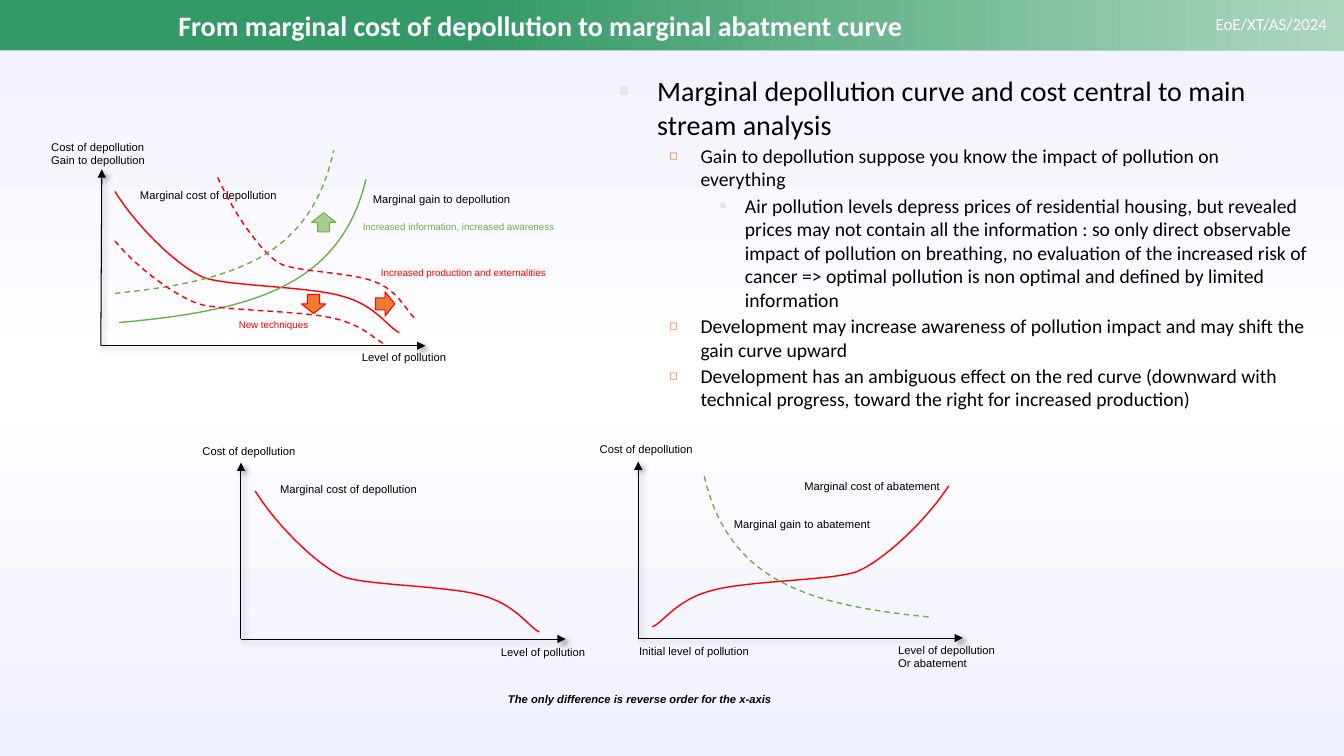
from copy import deepcopy

from lxml import etree
from pptx import Presentation, util as u
from pptx.dml.color import RGBColor
from pptx.enum import dml, shapes, text
from pptx.oxml import parse_xml
from pptx.oxml.ns import nsdecls, qn

COLORS = {
    "black": "000000", "white": "FFFFFF", "lavender": "F0F1FE",
    "band": "339966", "band_end": "ADD6C1", "red": "FF0000",
    "green": "70AD47", "pale_green": "A8D08C", "orange": "ED7D31", "gray": "E7E6E6",
}
COST = [(0, 0), (8.5, 27.1), (22.7, 53.6), (30.9, 60.7), (38.7, 67.1),
        (68.4, 67.1), (80.1, 74.3), (91.8, 80.7), (96.1, 96.4), (100, 100)]
GAIN = [(0, 100), (55, 91.5), (89.5, 74), (100, 0)]
BULLETS = [
    ("■", "gray", 60, 0.38, -0.38, 20),
    ("◻", "orange", 70, 0.81, -0.31, 14),
    ("■", "gray", 60, 1.25, -0.25, 14),
]


def rgb(name):
    return RGBColor.from_string(COLORS[name])


class Lecture:
    def __init__(self, slide):
        self.slide = slide
        self.canvas = slide.shapes

    def start_graph(self):
        self.canvas = self.slide.shapes.add_group_shape().shapes

    def end_graph(self):
        self.canvas = self.slide.shapes

    def gradient(self, fill, owner, names, angle):
        fill.gradient()
        fill.gradient_angle = angle
        stop_list = owner.xpath(".//a:gsLst")[0]
        while len(stop_list) < len(names):
            stop_list.append(deepcopy(stop_list[0]))
        for i, (stop, name) in enumerate(zip(fill.gradient_stops, names)):
            stop.position = i / (len(names) - 1)
            stop.color.rgb = rgb(name)

    def shape(self, kind, box, fill=None, line=None, rotation=0):
        part = self.canvas.add_shape(kind, *map(u.Inches, box))
        part.shadow.inherit = False
        part.rotation = rotation
        if fill:
            part.fill.solid()
            part.fill.fore_color.rgb = rgb(fill)
        if line:
            part.line.color.rgb = rgb(line)
            part.line.width = u.Pt(0.75)
        else:
            part.line.fill.background()
        return part

    def style(self, paragraph, size, color, font, bold=False, italic=False):
        for run in paragraph.runs:
            run.font.size = u.Pt(size)
            run.font.name = font
            run.font.color.rgb = rgb(color)
            run.font.bold = bold
            run.font.italic = italic

    def label(self, wording, box, size=8, color="black", font="Arial", indent=0.0,
              align=text.PP_ALIGN.LEFT, anchor=text.MSO_ANCHOR.TOP, bold=False, italic=False):
        frame = self.canvas.add_textbox(*map(u.Inches, box)).text_frame
        frame.word_wrap = True
        frame.vertical_anchor = anchor
        frame.text = wording
        for paragraph in frame.paragraphs:
            paragraph.alignment = align
            if indent:
                paragraph.level = 1
                paragraph._p.get_or_add_pPr().set("marL", str(u.Inches(indent)))
            self.style(paragraph, size, color, font, bold, italic)

    def graph_label(self, wording, left, top, **options):
        height = 0.24 + 0.13 * wording.count("\n")
        self.label(wording, (left, top, 5, height), indent=0.5, **options)

    def outline(self, items, box):
        frame = self.canvas.add_textbox(*map(u.Inches, box)).text_frame
        frame.word_wrap = True
        frame.text = "\n".join(wording for _, wording in items)
        for i, (paragraph, (level, _)) in enumerate(zip(frame.paragraphs, items)):
            mark, color, percent, margin, indent, size = BULLETS[level]
            paragraph.level = level
            properties = paragraph._p.get_or_add_pPr()
            properties.set("marL", str(u.Inches(margin)))
            properties.set("indent", str(u.Inches(indent)))
            tint = etree.SubElement(properties, qn("a:buClr"))
            etree.SubElement(tint, qn("a:srgbClr"), val=COLORS[color])
            etree.SubElement(properties, qn("a:buSzPct"), val=str(percent * 1000))
            etree.SubElement(properties, qn("a:buFont"), typeface="Arial")
            etree.SubElement(properties, qn("a:buChar"), char=mark)
            if i:
                paragraph.space_before = u.Pt(2)
            self.style(paragraph, size, "black", "Calibri")

    def axes(self, left, bottom, tip=0.0):
        for end in ((left + 3.22, bottom), (left + tip, bottom - 1.75)):
            axis = self.canvas.add_connector(
                shapes.MSO_CONNECTOR.STRAIGHT, *map(u.Inches, (left, bottom, *end)))
            axis.line.color.rgb = rgb("black")
            axis.line.width = u.Pt(0.75)
            etree.SubElement(axis.line._get_or_add_ln(), qn("a:tailEnd"), type="triangle")
            axis._element.spPr.append(parse_xml(
                f'<a:effectLst {nsdecls("a")}><a:outerShdw blurRad="{u.Pt(4)}" '
                f'dist="{u.Pt(3)}" dir="2700000" rotWithShape="0">'
                f'<a:srgbClr val="{COLORS["black"]}"><a:alpha val="40000"/></a:srgbClr>'
                '</a:outerShdw></a:effectLst>'))

    def curve(self, profile, box, color, dashed=False, mirrored=False):
        left, top, width, height = box
        points = [(u.Inches(left + width * (100 - x if mirrored else x) / 100),
                   u.Inches(top + height * y / 100)) for x, y in profile]
        builder = self.canvas.build_freeform(*points[0])
        builder.add_line_segments(points[1:], close=False)
        part = builder.convert_to_shape()
        segments = part._element.xpath(".//a:lnTo")
        for i in range(0, len(segments), 3):
            bezier = etree.Element(qn("a:cubicBezTo"))
            segments[i].addprevious(bezier)
            for segment in segments[i:i + 3]:
                bezier.append(segment[0])
                segment.getparent().remove(segment)
        part.shadow.inherit = False
        part.fill.background()
        part.line.color.rgb = rgb(color)
        part.line.width = u.Pt(1)
        if dashed:
            part.line.dash_style = dml.MSO_LINE.DASH


def main():
    deck = Presentation()
    deck.slide_width, deck.slide_height = u.Inches(13.33), u.Inches(7.5)
    slide = deck.slides.add_slide(deck.slide_layouts[6])
    page = Lecture(slide)
    page.gradient(slide.background.fill, slide.element, ("lavender", "white", "lavender"), 90)

    rectangle = shapes.MSO_SHAPE.RECTANGLE
    page.shape(rectangle, (0, 0, 13.33, 0.5), "band")
    fade = page.shape(rectangle, (4.67, 0, 8.66, 0.5))
    page.gradient(fade.fill, fade._element, ("band", "band_end"), 0)
    page.label("EoE/XT/AS/2024", (11.32, 0.09, 1.94, 0.3), 12, "white", "Calibri",
               align=text.PP_ALIGN.RIGHT)
    page.label("From marginal cost of depollution to marginal abatment curve",
               (1.67, 0, 9, 0.5), 20, "white", "Calibri",
               anchor=text.MSO_ANCHOR.MIDDLE, bold=True)
    page.outline([
        (0, "Marginal depollution curve and cost central to main stream analysis"),
        (1, "Gain to depollution suppose you know the impact of pollution on everything"),
        (2, "Air pollution levels depress prices of residential housing, but revealed prices "
            "may not contain all the information : so only direct observable impact of "
            "pollution on breathing, no evaluation of the increased risk of cancer => optimal "
            "pollution is non optimal and defined by limited information"),
        (1, "Development may increase awareness of pollution impact and may shift the gain "
            "curve upward"),
        (1, "Development has an ambiguous effect on the red curve (downward with technical "
            "progress, toward the right for increased production)"),
    ], (6.04, 0.68, 7.04, 6.61))

    page.start_graph()
    page.axes(1, 3.43, tip=0.01)
    page.curve(COST, (1.14, 1.9, 2.82, 1.4), "red")
    page.curve(GAIN, (1.18, 1.78, 2.45, 1.42), "green")
    page.graph_label("Cost of depollution\nGain to depollution", -0.09, 1.34)
    page.graph_label("Level of pollution", 2.99, 3.43)
    page.graph_label("Marginal cost of depollution", 0.79, 1.82)
    page.graph_label("Marginal gain to depollution", 3.1, 1.86)
    page.curve(COST, (2.16, 1.76, 1.96, 1.4), "red", dashed=True)
    page.curve(GAIN, (1.14, 1.49, 2.17, 1.42), "green", dashed=True)
    page.curve(COST, (1.14, 2.39, 2.69, 1.03), "red", dashed=True)
    for wording, box, color, fill, arrow, rotation in (
        ("New techniques", (2.27, 3.11, 0.9, 0.22), "red", "orange", (2.99, 2.92), 0),
        ("Increased production and externalities", (3.68, 2.6, 1.86, 0.22),
         "red", "orange", (3.7, 2.92), 270),
        ("Increased information, increased awareness", (3.5, 2.14, 2.13, 0.22),
         "green", "pale_green", (3.09, 2.11), 180),
    ):
        page.shape(shapes.MSO_SHAPE.DOWN_ARROW, (*arrow, 0.24, 0.19), fill, color, rotation)
        page.label(wording, box, 7, color)

    page.start_graph()
    page.axes(2.39, 6.34)
    page.curve(COST, (2.53, 4.87, 2.82, 1.4), "red")
    page.graph_label("Cost of depollution", 1.41, 4.36)
    page.graph_label("Level of pollution", 4.37, 6.35)
    page.graph_label("Marginal cost of depollution", 2.18, 4.74)

    page.start_graph()
    page.axes(6.33, 6.33)
    page.curve(COST, (6.47, 4.82, 2.94, 1.4), "red", mirrored=True)
    page.graph_label("Cost of depollution", 5.35, 4.34)
    page.graph_label("Level of depollution\nOr abatement", 8.31, 6.33)
    page.graph_label("Marginal cost of abatement", 7.38, 4.71)
    page.graph_label("The only difference is reverse order for the x-axis", 4.44, 6.82,
                     bold=True, italic=True)
    page.graph_label("Marginal gain to abatement", 6.68, 5.08)
    page.graph_label("Initial level of pollution", 5.74, 6.34)
    page.end_graph()
    page.curve(GAIN, (6.98, 4.7, 2.23, 1.42), "green", dashed=True, mirrored=True)

    deck.save("out.pptx")


if __name__ == "__main__":
    main()
